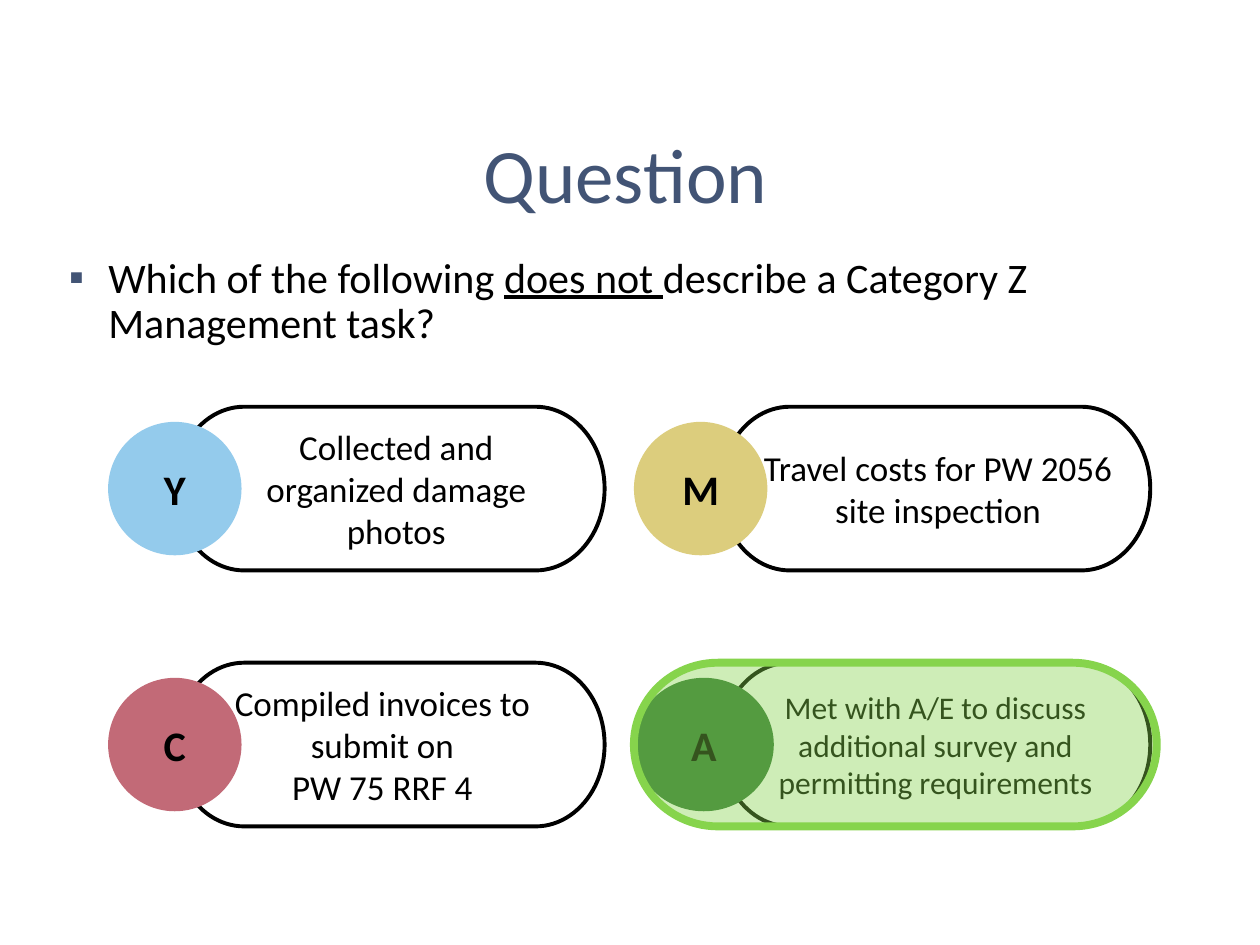
from collections import namedtuple

from lxml import etree
from pptx import Presentation
from pptx.dml.color import RGBColor
from pptx.enum.shapes import MSO_SHAPE
from pptx.enum.text import MSO_ANCHOR, PP_ALIGN
from pptx.oxml.ns import qn
from pptx.util import Cm, Pt

PILL, CIRCLE = MSO_SHAPE.FLOWCHART_TERMINATOR, MSO_SHAPE.OVAL
MIDDLE, TOP = MSO_ANCHOR.MIDDLE, MSO_ANCHOR.TOP
CENTER, LEFT = PP_ALIGN.CENTER, PP_ALIGN.LEFT
COLORS = {
    "title": "425475", "ink": "000000", "paper": "FFFFFF",
    "blue": "94CBEC", "rose": "C26A77", "sand": "DCCD7D",
    "green": "337538", "highlight": "86D44C",
}
Box = namedtuple("Box", "left top width height")
Answer = namedtuple("Answer", "letter color lines size insets circle_width")

PILL_WIDTH = 8.66
CIRCLE_SIZE = 2.69
ROW_TOPS = (8.2, 13.36)
COLUMNS = ((2.18, 10.01), (12.78, 10.41))
ROW_HEIGHT = 3.3
ANSWERS = (
    (
        Answer("Y", "blue", ["Collected and organized damage photos"],
               20, (1.07, 0.81), CIRCLE_SIZE),
        Answer("M", "sand", ["Travel costs for PW 2056 site inspection"],
               20, (0.35, 0.25), CIRCLE_SIZE),
    ),
    (
        Answer("C", "rose", ["Compiled invoices to submit on", "PW 75 RRF 4"],
               20, (0.25, 0.55), CIRCLE_SIZE),
        Answer("A", "green",
               ["Met with A/E to discuss additional survey and",
                "permitting requirements"],
               18, (0.25, 0.25), 2.82),
    ),
)


def color(name):
    return RGBColor.from_string(COLORS[name])


def set_values(target, values):
    for name, value in values.items():
        setattr(target, name, value)


def place(shape, box):
    set_values(shape, {name: Cm(value) for name, value in box._asdict().items()})


def set_font(font, size, ink="ink", bold=False):
    set_values(font, {"name": "Calibri", "size": Pt(size), "bold": bold})
    font.color.rgb = color(ink)


def add_bullet(para, symbol, ink):
    props = para._p.get_or_add_pPr()
    props.set("marL", str(Cm(0.79)))
    props.set("indent", str(Cm(-0.79)))
    bullet_color = etree.SubElement(props, qn("a:buClr"))
    etree.SubElement(bullet_color, qn("a:srgbClr"), val=COLORS[ink])
    etree.SubElement(props, qn("a:buFont"), typeface="Wingdings 2"[:0] or "Calibri")
    etree.SubElement(props, qn("a:buChar"), char=symbol)


def fill_title(title, box):
    place(title, box)
    title.text_frame.text = "Question"
    title.text_frame.vertical_anchor = MIDDLE
    para = title.text_frame.paragraphs[0]
    set_values(para, {"alignment": CENTER, "line_spacing": 0.9})
    set_font(para.runs[0].font, 44, "title")


def fill_question(body, box):
    place(body, box)
    body.text_frame.vertical_anchor = TOP
    para = body.text_frame.paragraphs[0]
    add_bullet(para, "▪", "title")
    set_values(para, {"alignment": LEFT, "line_spacing": 0.9, "space_before": Pt(0)})
    for text, underline in (
        ("Which of the following ", False),
        ("does not ", True),
        ("describe a Category Z Management task?", False),
    ):
        span = para.add_run()
        span.text = text
        set_font(span.font, 24)
        span.font.underline = underline


def add_block(shapes, kind, box, fill, outline=None, weight=0):
    shape = shapes.add_shape(kind, *map(Cm, box))
    shape.shadow.inherit = False
    shape.fill.solid()
    shape.fill.fore_color.rgb = color(fill)
    if outline:
        shape.line.color.rgb = color(outline)
        shape.line.width = Pt(weight)
    else:
        shape.line.fill.background()
    return shape


def write_centered(shape, lines, size, bold=False):
    frame = shape.text_frame
    set_values(frame, {"text": "\n".join(lines), "word_wrap": True,
                       "vertical_anchor": MIDDLE})
    for para in frame.paragraphs:
        para.alignment = CENTER
        set_font(para.runs[0].font, size, bold=bold)


def add_answer(page, box, answer):
    shapes = page.shapes.add_group_shape().shapes
    pill_box = box._replace(left=box.left + box.width - PILL_WIDTH, width=PILL_WIDTH)
    pill = add_block(shapes, PILL, pill_box, "paper", "ink", 2.25)
    write_centered(pill, answer.lines, answer.size)
    left, right = answer.insets
    set_values(pill.text_frame, {"margin_left": Cm(left), "margin_right": Cm(right)})

    circle_top = box.top + (box.height - CIRCLE_SIZE) / 2
    circle_box = Box(box.left, circle_top, answer.circle_width, CIRCLE_SIZE)
    circle = add_block(shapes, CIRCLE, circle_box, answer.color)
    set_values(circle.text_frame, {"margin_left": 0, "margin_right": 0})
    write_centered(circle, [answer.letter], 24, bold=True)


def add_highlight(page, box):
    cover = add_block(page.shapes, PILL, box, "highlight", "highlight", 4.5)
    fill = cover._element.spPr.find(qn("a:solidFill"))
    etree.SubElement(fill[0], qn("a:alpha"), val="40000")


def main():
    deck = Presentation()
    deck.slide_width, deck.slide_height = Cm(25.4), Cm(19.05)
    page = deck.slides.add_slide(deck.slide_layouts[1])
    fill_title(page.shapes.title, Box(0.99, 2.69, 23.24, 1.83))
    fill_question(page.placeholders[1], Box(1.14, 5.05, 23.01, 13.26))
    for top, answers in zip(ROW_TOPS, ANSWERS):
        for (left, width), answer in zip(COLUMNS, answers):
            box = Box(left, top, width, ROW_HEIGHT)
            add_answer(page, box, answer)
    add_highlight(page, box._replace(width=10.54))
    deck.save("out.pptx")


if __name__ == "__main__":
    main()
